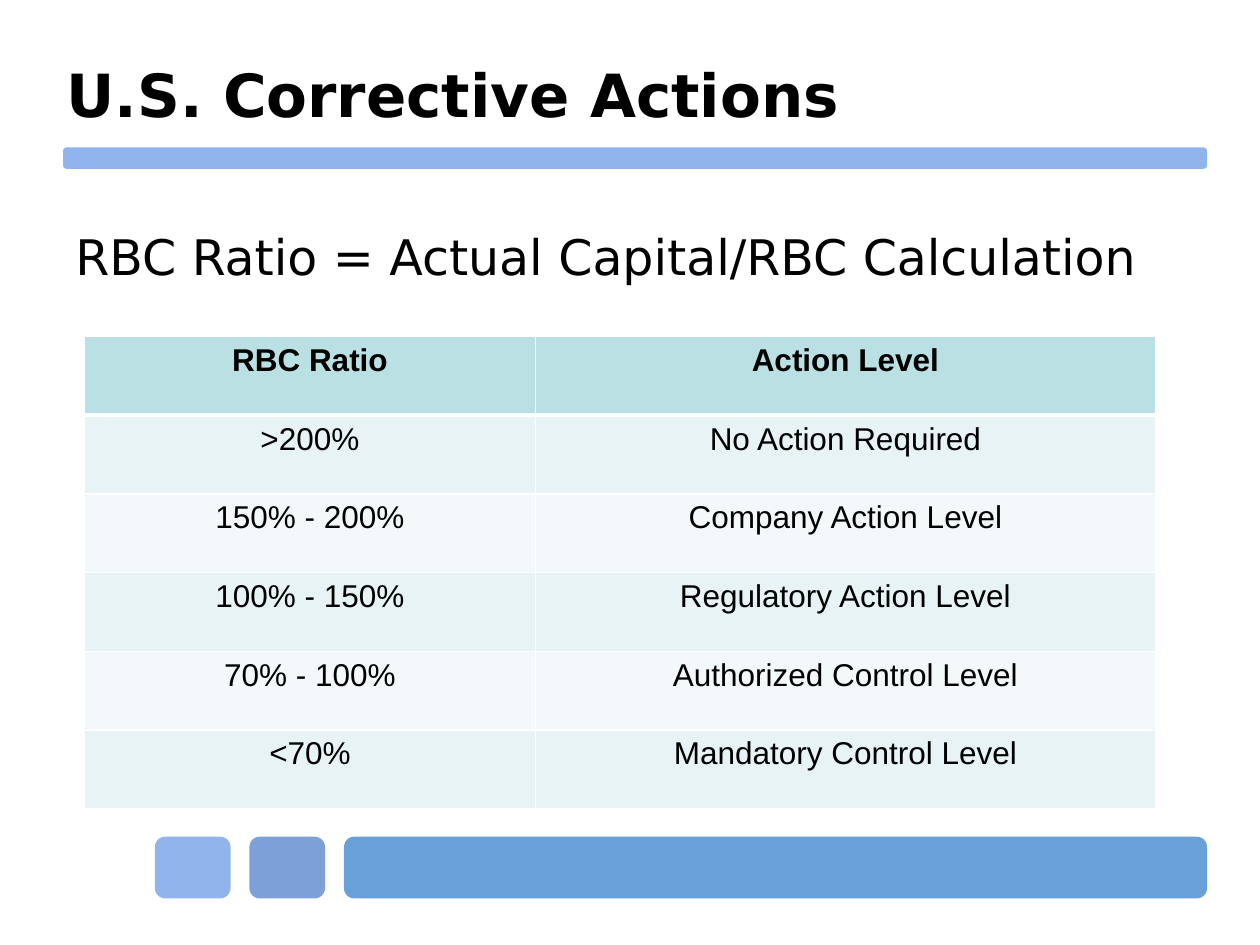
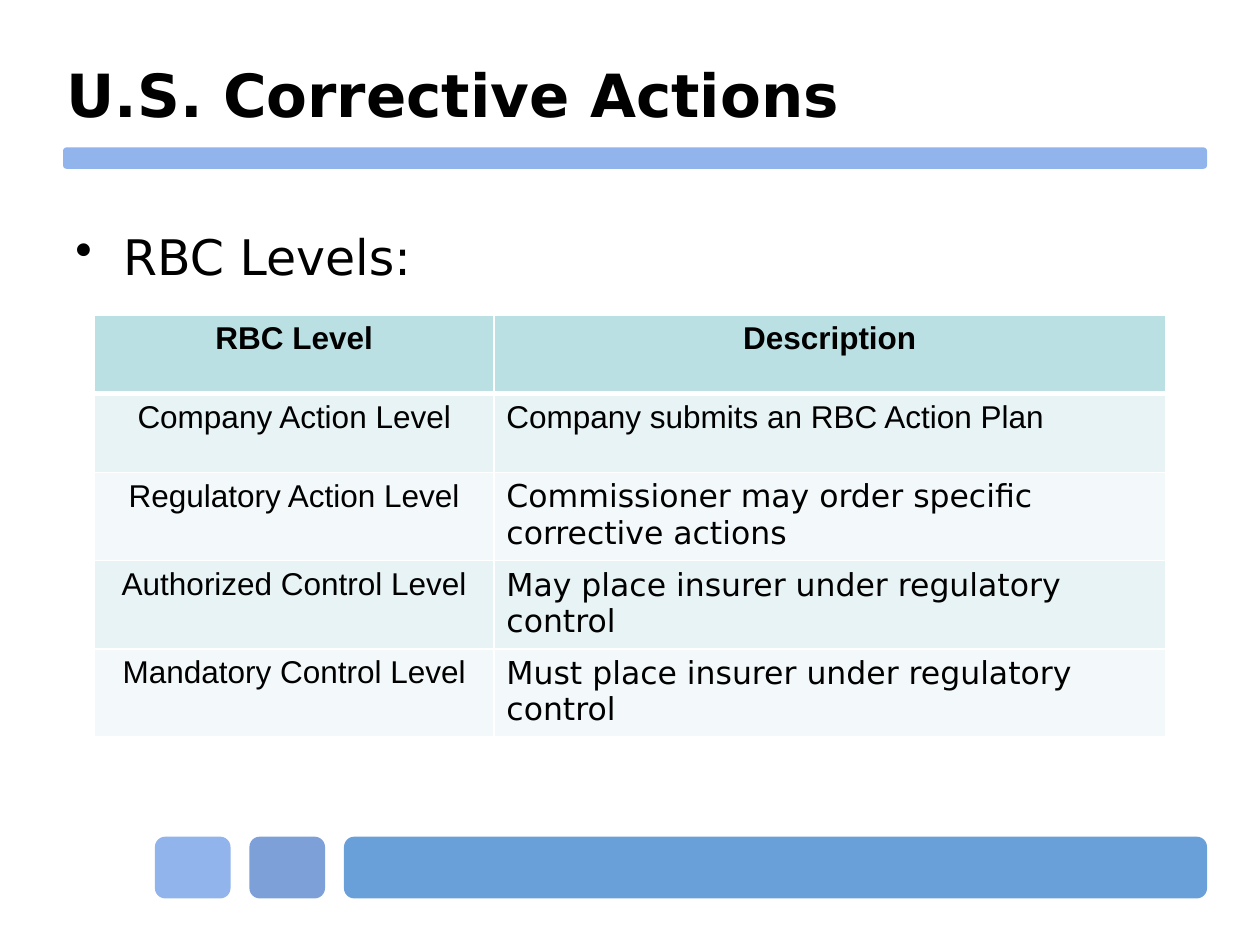
from lxml import etree
from pptx import Presentation
from pptx.dml.color import RGBColor
from pptx.enum.shapes import MSO_SHAPE
from pptx.enum.text import MSO_ANCHOR, PP_ALIGN
from pptx.oxml.ns import qn
from pptx.util import Inches, Pt

BAND = MSO_SHAPE.FLOWCHART_ALTERNATE_PROCESS
LEFT, CENTER = PP_ALIGN.LEFT, PP_ALIGN.CENTER
TOP, MIDDLE = MSO_ANCHOR.TOP, MSO_ANCHOR.MIDDLE

COLORS = {
    "text": "000000",
    "border": "FFFFFF",
    "light_blue": "91B4ED",
    "mid_blue": "7DA0D9",
    "deep_blue": "69A0D9",
    "header": "BBE0E3",
    "odd_row": "E7F3F4",
    "even_row": "F3F9FA",
}
HEADING_FONT, TABLE_FONT = "DejaVu Sans", "Arial"
ROW_HEIGHT = 0.625


class Deck:
    """Holds the shared style and the slide being built."""

    def __init__(self):
        self.prs = Presentation()
        self.prs.slide_width, self.prs.slide_height = Inches(10), Inches(7.5)
        self.slide = None

    def new_slide(self, title):
        self.slide = self.prs.slides.add_slide(self.prs.slide_layouts[6])
        # Footer blocks and title rule
        self.band(1.23, 6.64, 0.6, 0.49, "light_blue")
        self.band(1.98, 6.64, 0.6, 0.49, "mid_blue")
        self.band(2.73, 6.64, 6.85, 0.49, "deep_blue")
        self.band(0.5, 1.17, 9.08, 0.17, "light_blue")
        self.text(title, 0.43, 0.12, 9, 1.25, 34, bold=True, anchor=MIDDLE)

    def band(self, left, top, width, height, color):
        band = self.slide.shapes.add_shape(
            BAND, Inches(left), Inches(top), Inches(width), Inches(height))
        band.shadow.inherit = False
        band.fill.solid()
        band.fill.fore_color.rgb = RGBColor.from_string(COLORS[color])
        band.line.fill.background()

    def style(self, paragraph, size, font, bold=False):
        for run in paragraph.runs:
            run.font.size = Pt(size)
            run.font.name = font
            run.font.bold = bold
            run.font.color.rgb = RGBColor.from_string(COLORS["text"])

    def text(self, words, left, top, width, height, size,
             bold=False, anchor=TOP, bullet=False):
        frame = self.slide.shapes.add_textbox(
            Inches(left), Inches(top), Inches(width), Inches(height)).text_frame
        frame.word_wrap = True
        frame.vertical_anchor = anchor
        frame.text = words
        paragraph = frame.paragraphs[0]
        if bullet:
            props = paragraph._p.get_or_add_pPr()
            props.set("marL", str(Inches(0.38)))
            props.set("indent", str(-Inches(0.38)))
            etree.SubElement(props, qn("a:buChar"), char="•")
        self.style(paragraph, size, HEADING_FONT, bold)

    def borders(self, cell, top=1, bottom=1):
        props = cell._tc.get_or_add_tcPr()
        for side, points in (("L", 1), ("R", 1), ("T", top), ("B", bottom)):
            line = etree.SubElement(props, qn(f"a:ln{side}"), w=str(Pt(points)))
            fill = etree.SubElement(line, qn("a:solidFill"))
            etree.SubElement(fill, qn("a:srgbClr"), val=COLORS["border"])

    def table(self, rows, left, top, widths, body_aligns, font_of=None):
        """font_of maps (row, column) to a font other than the table font."""
        grid = self.slide.shapes.add_table(
            len(rows), len(widths), Inches(left), Inches(top),
            Inches(sum(widths)), Inches(ROW_HEIGHT * len(rows))).table
        grid.horz_banding = False
        for column, width in zip(grid.columns, widths):
            column.width = Inches(width)
        for r, row in enumerate(rows):
            grid.rows[r].height = Inches(ROW_HEIGHT)
            is_header = r == 0
            color = "header" if is_header else "odd_row" if r % 2 else "even_row"
            for c, words in enumerate(row):
                cell = grid.cell(r, c)
                # A thick line separates the header from the body
                self.borders(cell, top=3 if r == 1 else 1,
                             bottom=3 if is_header else 1)
                cell.fill.solid()
                cell.fill.fore_color.rgb = RGBColor.from_string(COLORS[color])
                cell.text = words
                paragraph = cell.text_frame.paragraphs[0]
                paragraph.alignment = CENTER if is_header else body_aligns[c]
                font = (font_of or {}).get((r, c), TABLE_FONT)
                self.style(paragraph, 18, font, is_header)


def main():
    deck = Deck()
    title = "U.S. Corrective Actions"

    # Ratio thresholds
    action_levels = [
        ("RBC Ratio", "Action Level"),
        (">200%", "No Action Required"),
        ("150% - 200%", "Company Action Level"),
        ("100% - 150%", "Regulatory Action Level"),
        ("70% - 100%", "Authorized Control Level"),
        ("<70%", "Mandatory Control Level"),
    ]
    deck.new_slide(title)
    deck.text("RBC Ratio = Actual Capital/RBC Calculation",
              0.5, 1.75, 9, 0.75, 28)
    deck.table(action_levels, 0.67, 2.67, (3.58, 4.92), (CENTER, CENTER))

    # What each level means
    level_descriptions = [
        ("RBC Level", "Description"),
        ("Company Action Level", "Company submits an RBC Action Plan"),
        ("Regulatory Action Level",
         "Commissioner may order specific corrective actions"),
        ("Authorized Control Level",
         "May place insurer under regulatory control"),
        ("Mandatory Control Level",
         "Must place insurer under regulatory control"),
    ]
    regulator_fonts = {(row, 1): HEADING_FONT for row in (2, 3, 4)}
    deck.new_slide(title)
    deck.text("RBC Levels:", 0.5, 1.75, 9, 4.95, 28, bullet=True)
    deck.table(level_descriptions, 0.75, 2.5, (3.17, 5.33), (CENTER, LEFT),
               regulator_fonts)

    deck.prs.save("out.pptx")


if __name__ == "__main__":
    main()
